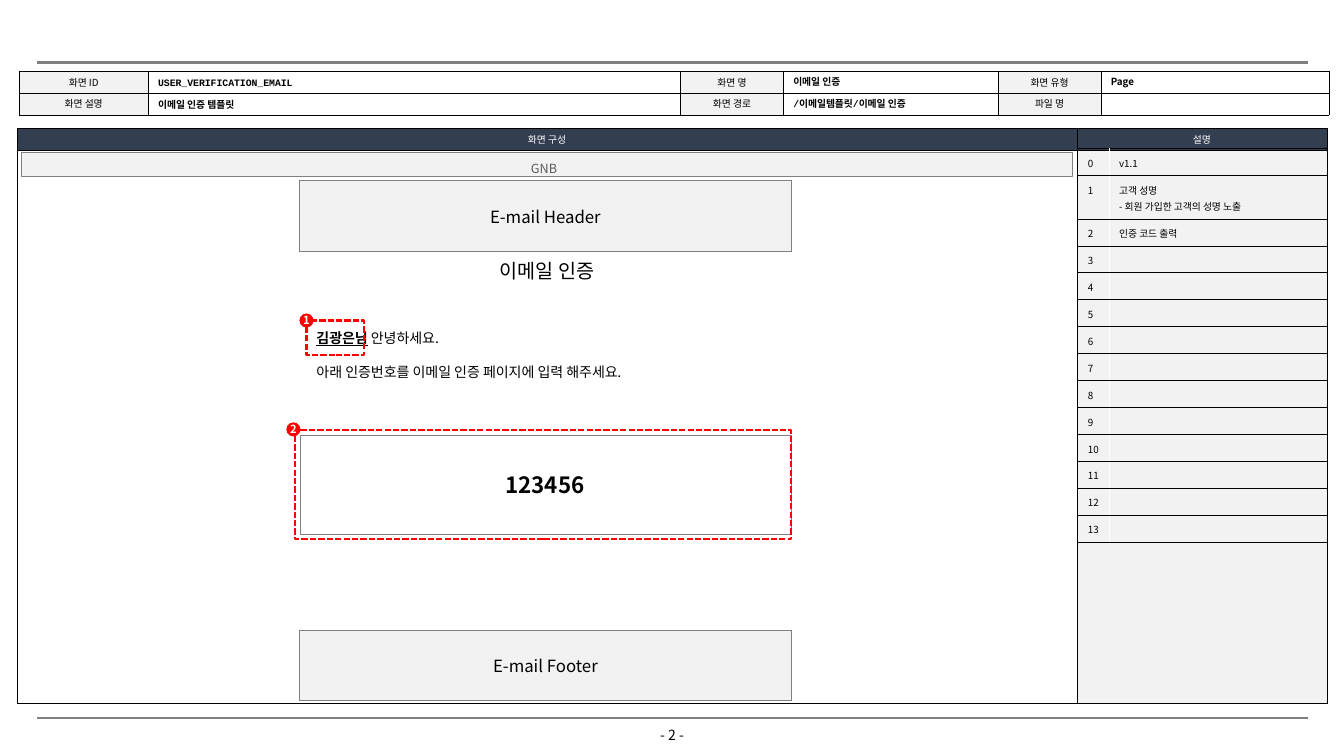
from dataclasses import dataclass

from lxml.etree import SubElement
from pptx import Presentation
from pptx.dml.color import RGBColor
from pptx.enum.dml import MSO_LINE_DASH_STYLE as Dash
from pptx.enum.shapes import MSO_CONNECTOR, MSO_SHAPE as Preset
from pptx.enum.text import MSO_ANCHOR as Anchor, PP_ALIGN as Align
from pptx.oxml.ns import qn
from pptx.util import Inches, Pt


@dataclass(frozen=True)
class Theme:
    sans: str = "Noto Sans CJK KR"
    mono: str = "Courier New"
    black: str = "000000"
    white: str = "FFFFFF"
    navy: str = "333F50"
    panel: str = "F2F2F2"
    gray: str = "808080"
    dim: str = "595959"
    red: str = "FF0000"
    small: int = 7
    badge: int = 8
    label: int = 9
    body: int = 10
    block: int = 12
    title: int = 14
    code: int = 16


THEME = Theme()
SIDES = ("L", "R", "T", "B")


def rgb(value):
    return RGBColor.from_string(value)


def style(para, size, color=THEME.black, bold=False, font=THEME.sans, align=Align.LEFT):
    para.alignment = align
    para.font.size = Pt(size)
    para.font.bold = bold
    para.font.name = font
    para.font.color.rgb = rgb(color)
    # East Asian typeface for the Korean text
    defaults = para._p.pPr.find(qn("a:defRPr"))
    SubElement(defaults, qn("a:ea")).set("typeface", THEME.sans)


def set_insets(target, left, top, right, bottom):
    target.margin_left, target.margin_right = Inches(left), Inches(right)
    target.margin_top, target.margin_bottom = Inches(top), Inches(bottom)


def add_text(page, at, text, size, insets=(0.1, 0.05, 0.1, 0.05),
             anchor=Anchor.TOP, wrap=True, **look):
    box = page.shapes.add_textbox(*map(Inches, at))
    frame = box.text_frame
    frame.word_wrap = wrap
    frame.vertical_anchor = anchor
    set_insets(frame, *insets)
    para = frame.paragraphs[0]
    para.text = text
    style(para, size, **look)
    return frame


def add_shape(page, at, preset=Preset.RECTANGLE, fill=None, line=None, width=0.75, dash=None):
    shape = page.shapes.add_shape(preset, *map(Inches, at))
    shape.shadow.inherit = False
    if fill:
        shape.fill.solid()
        shape.fill.fore_color.rgb = rgb(fill)
    else:
        shape.fill.background()
    if line:
        shape.line.color.rgb = rgb(line)
        shape.line.width = Pt(width)
        if dash:
            shape.line.dash_style = dash
    else:
        shape.line.fill.background()
    return shape


def add_rule(page, top):
    rule = page.shapes.add_connector(
        MSO_CONNECTOR.STRAIGHT, Inches(0.37), Inches(top), Inches(12.97), Inches(top))
    rule.line.color.rgb = rgb(THEME.gray)
    rule.line.width = Pt(1.5)
    SubElement(rule._element.spPr, qn("a:effectLst"))


def add_callout(page, number, area, center):
    add_shape(page, area, line=THEME.red, width=1.5, dash=Dash.SQUARE_DOT)
    x, y = center
    badge = add_shape(page, (x - 0.07, y - 0.07, 0.14, 0.14), Preset.OVAL, fill=THEME.red)
    frame = badge.text_frame
    frame.word_wrap = False
    frame.vertical_anchor = Anchor.MIDDLE
    set_insets(frame, 0, 0, 0, 0)
    frame.text = str(number)
    style(frame.paragraphs[0], THEME.badge, THEME.white, bold=True, align=Align.CENTER)


def add_grid(page, left, top, columns, rows):
    holder = page.shapes.add_table(
        len(rows), len(columns), Inches(left), Inches(top),
        Inches(sum(columns)), Inches(sum(rows)))
    table = holder.table
    table.first_row = table.horz_banding = False
    for column, width in zip(table.columns, columns):
        column.width = Inches(width)
    for row, height in zip(table.rows, rows):
        row.height = Inches(height)
    return table


def set_cell(cell, text, borders, fill=None, size=THEME.small, insets=(0.12, 0.02, 0.12, 0.02),
             anchor=Anchor.MIDDLE, spacing=None, **look):
    properties = cell._tc.get_or_add_tcPr()
    for side in SIDES:
        edge = SubElement(properties, qn(f"a:ln{side}"))
        if side in borders:
            color, width = borders[side]
            edge.set("w", str(Pt(width)))
            paint = SubElement(edge, qn("a:solidFill"))
            SubElement(paint, qn("a:srgbClr")).set("val", color)
        else:
            SubElement(edge, qn("a:noFill"))
    if fill:
        cell.fill.solid()
        cell.fill.fore_color.rgb = rgb(fill)
    else:
        cell.fill.background()
    cell.vertical_anchor = anchor
    set_insets(cell, *insets)
    cell.text = text
    for para in cell.text_frame.paragraphs:
        style(para, size, **look)
        if spacing:
            para.line_spacing = Pt(spacing)


def add_footer(page):
    strip = add_grid(page, 0.37, 7.12, (6.3, 6.3), (0.4,))
    for column in range(2):
        set_cell(strip.cell(0, column), "", {"T": (THEME.gray, 1.5)})
    add_text(page, (6.12, 7.21, 1.09, 0.17), "- 2 -", THEME.body, (0, 0, 0, 0), align=Align.CENTER)


def add_frame(page):
    borders = dict.fromkeys(SIDES, (THEME.black, 0.25))
    # Main area and description panel
    panels = add_grid(page, 0.17, 1.27, (10.51, 2.48), (0.22, 5.49))
    for column, (heading, fill) in enumerate((("화면 구성", None), ("설명", THEME.panel))):
        set_cell(panels.cell(0, column), heading, borders, THEME.navy,
                 color=THEME.white, align=Align.CENTER)
        set_cell(panels.cell(1, column), "", borders, fill)
    # Screen information
    info = add_grid(page, 0.19, 0.71, (1.28, 5.28, 1.02, 2.13, 1.02, 2.26), (0.21, 0.22))
    labels = (("화면 ID", "화면 명", "화면 유형"), ("화면 설명", "화면 경로", "파일 명"))
    for row, names in enumerate(labels):
        for index, name in enumerate(names):
            set_cell(info.cell(row, 2 * index), name, borders, THEME.panel, align=Align.CENTER)
            set_cell(info.cell(row, 2 * index + 1), "", borders)
    values = (
        ((1.47, 0.7, 5.24, 0.24), "USER_VERIFICATION_EMAIL", THEME.mono),
        ((1.47, 0.93, 5.25, 0.22), "이메일 인증 템플릿", THEME.sans),
        ((7.77, 0.7, 2.13, 0.21), "이메일 인증", THEME.sans),
        ((7.77, 0.91, 2.13, 0.23), "/이메일템플릿/이메일 인증", THEME.mono),
        ((10.92, 0.7, 2.26, 0.22), "Page", THEME.sans),
    )
    for at, text, font in values:
        add_text(page, at, text, THEME.small, (0.1, 0, 0.1, 0), Anchor.MIDDLE,
                 bold=True, font=font, align=Align.JUSTIFY)


def add_descriptions(page):
    notes = ["v1.1", "고객 성명\n- 회원 가입한 고객의 성명 노출", "인증 코드 출력"]
    notes += [""] * (14 - len(notes))
    spacing = 12
    heights = [0.1 + spacing / 72 * (note.count("\n") + 1) for note in notes]
    table = add_grid(page, 10.69, 1.47, (0.31, 2.16), heights)
    black, white = (THEME.black, 0.25), (THEME.white, 0.5)
    for row, note in enumerate(notes):
        for column, (text, divider) in enumerate(((str(row), "R"), (note, "L"))):
            set_cell(table.cell(row, column), text, {"T": black, "B": black, divider: white},
                     insets=(0.1, 0.05, 0.1, 0.05), anchor=Anchor.TOP, spacing=spacing)


def add_email(page):
    # Navigation bar
    bar = add_shape(page, (0.21, 1.51, 10.43, 0.24), fill=THEME.panel, line=THEME.gray)
    frame = bar.text_frame
    frame.vertical_anchor = Anchor.MIDDLE
    set_insets(frame, 0.04, 0.05, 0.1, 0.05)
    frame.text = "GNB"
    style(frame.paragraphs[0], THEME.label, THEME.dim, align=Align.CENTER)
    frame.paragraphs[0].line_spacing = 1.5

    # Title and greeting
    add_text(page, (4.8, 2.52, 1.25, 0.34), "이메일 인증", THEME.title,
             wrap=False, align=Align.CENTER)
    greeting = add_text(page, (3.04, 3.22, 4.72, 0.61), "", THEME.body)
    name = greeting.paragraphs[0].add_run()
    name.text = "김광은님"
    name.font.bold = name.font.underline = True
    greeting.paragraphs[0].add_run().text = " 안녕하세요."
    guide = greeting.add_paragraph()
    guide.text = "아래 인증번호를 이메일 인증 페이지에 입력 해주세요."
    guide.space_before = Pt(12)
    style(guide, THEME.body)

    # Header and footer blocks
    borders = dict.fromkeys(SIDES, (THEME.gray, 0.5))
    for top, text in ((1.79, "E-mail Header"), (6.25, "E-mail Footer")):
        block = add_grid(page, 2.97, top, (4.88,), (0.7,))
        set_cell(block.cell(0, 0), text, borders, THEME.panel, THEME.block,
                 (0.09, 0.07, 0.09, 0.07), align=Align.CENTER)

    # Verification code and callouts
    add_callout(page, 1, (3.04, 3.18, 0.57, 0.34), (3.04, 3.18))
    add_shape(page, (2.98, 4.32, 4.87, 0.98), fill=THEME.white, line=THEME.gray, width=0.25)
    add_text(page, (4.44, 4.63, 1.93, 0.37), "123456", THEME.code, bold=True, align=Align.CENTER)
    add_callout(page, 2, (2.93, 4.27, 4.92, 1.08), (2.91, 4.26))


def main():
    deck = Presentation()
    deck.slide_width, deck.slide_height = Inches(13.33), Inches(7.5)
    page = deck.slides.add_slide(deck.slide_layouts[6])
    add_rule(page, 0.62)
    add_footer(page)
    add_frame(page)
    add_descriptions(page)
    add_email(page)
    deck.save("out.pptx")


if __name__ == "__main__":
    main()
